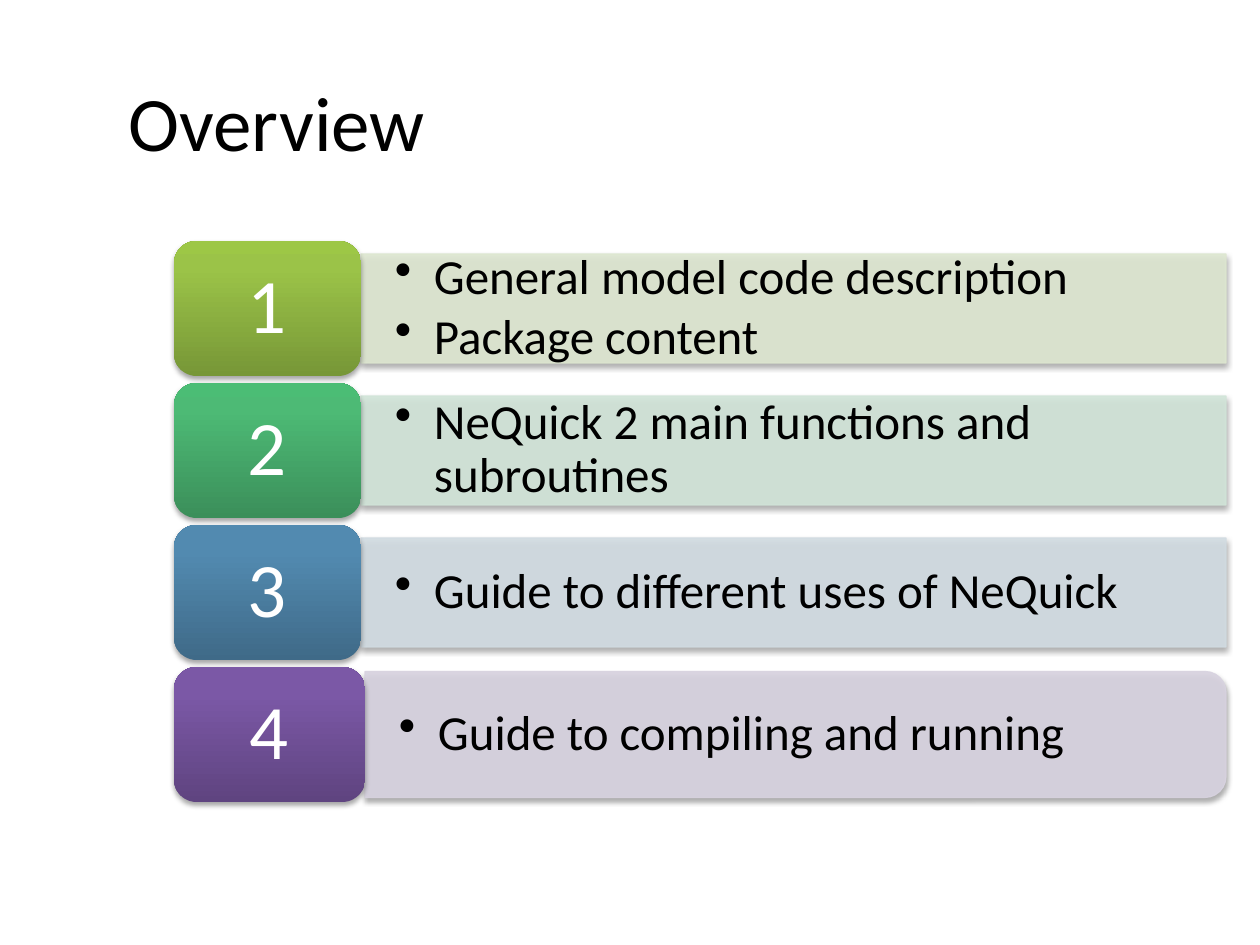
from copy import deepcopy

from lxml.etree import SubElement
from pptx import Presentation
from pptx.dml.color import RGBColor
from pptx.enum.shapes import MSO_SHAPE
from pptx.enum.text import MSO_ANCHOR, PP_ALIGN
from pptx.oxml.ns import qn
from pptx.util import Pt

PX = 7257.14  # EMU per px at 126 px to the inch


def emu(*lengths):
    return [round(length * PX) for length in lengths]


def color(hex_code):
    return RGBColor.from_string(hex_code)


# number, tile width, gradient from bottom to top, bar colour, bar shape, bar height, bullets
RECT, ROUND = MSO_SHAPE.RECTANGLE, MSO_SHAPE.ROUND_2_SAME_RECTANGLE
TOPICS = [
    ("1", 187, ("779737", "9BC348", "9DC746"), "DEE7D1", RECT, 109,
     ["General model code description", "Package content"]),
    ("2", 187, ("3B8F5A", "4DBA75", "4BBD75"), "D2E5D9", RECT, 109,
     ["NeQuick 2 main functions and subroutines"]),
    ("3", 187, ("3F6A88", "528AB0", "518BB3"), "D2DCE2", RECT, 109,
     ["Guide to different uses of NeQuick"]),
    ("4", 191, ("5F4480", "7B58A6", "7C57A8"), "D8D3E0", ROUND, 126,
     ["Guide to compiling and running"]),
]
LEFT, RIGHT, TOP, PITCH, TILE_HEIGHT = 174, 1226, 241, 142, 135

deck = Presentation()
deck.slide_width, deck.slide_height = emu(1260, 945)
page = deck.slides.add_slide(deck.slide_layouts[5])

title = page.shapes.title
title.left, title.top, title.width, title.height = emu(116, 42, 1113, 158)
title.text_frame.vertical_anchor = MSO_ANCHOR.MIDDLE
para = title.text_frame.paragraphs[0]
para.alignment = PP_ALIGN.LEFT
span = para.add_run()
span.text = "Overview"
span.font.name, span.font.size = "Calibri", Pt(44)
span.font.color.rgb = color("000000")

for row, (number, tile_width, gradient, tint, outline, bar_height, bullets) in enumerate(TOPICS):
    tile_top = TOP + row * PITCH
    middle = tile_top + TILE_HEIGHT / 2
    bar_left = LEFT + tile_width
    bar_width = RIGHT - bar_left

    # The bar stands upright and is turned, so its rounded end faces right
    center = bar_left + bar_width / 2
    bar = page.shapes.add_shape(outline, *emu(
        center - bar_height / 2, middle - bar_width / 2, bar_height, bar_width))
    bar.rotation = 90
    bar.fill.solid()
    bar.fill.fore_color.rgb = color(tint)
    bar.line.color.rgb = color(tint)
    bar.line.width = Pt(0.75)
    for shade in bar.element.spPr.iter(qn("a:srgbClr")):
        SubElement(shade, qn("a:alpha"), val="90000")

    box = page.shapes.add_textbox(*emu(bar_left, middle - bar_height / 2, bar_width, bar_height))
    frame = box.text_frame
    frame.word_wrap = True
    frame.vertical_anchor = MSO_ANCHOR.MIDDLE
    frame.margin_left, frame.margin_right, frame.margin_top, frame.margin_bottom = emu(34, 34, 18, 18)
    for index, bullet in enumerate(bullets):
        para = frame.add_paragraph() if index else frame.paragraphs[0]
        para.level = 1
        para.line_spacing = 0.9
        para.space_after = Pt(4.2)
        properties = para._p.get_or_add_pPr()
        indent = emu(39)[0]
        properties.set("marL", str(indent))
        properties.set("indent", str(-indent))
        SubElement(properties, qn("a:buChar"), char="•")
        span = para.add_run()
        span.text = bullet
        span.font.name, span.font.size = "Calibri", Pt(28)
        span.font.color.rgb = color("000000")

    tile = page.shapes.add_shape(
        MSO_SHAPE.ROUNDED_RECTANGLE, *emu(LEFT, tile_top, tile_width, TILE_HEIGHT))
    tile.fill.gradient()
    tile.fill.gradient_angle = 90
    stop_list = tile.element.spPr.find(".//" + qn("a:gsLst"))
    stop_list.append(deepcopy(stop_list[-1]))
    for stop, position, hex_code in zip(tile.fill.gradient_stops, (0, 0.8, 1), gradient):
        stop.position = position
        stop.color.rgb = color(hex_code)
    tile.line.fill.background()
    tile.text_frame.vertical_anchor = MSO_ANCHOR.MIDDLE
    para = tile.text_frame.paragraphs[0]
    para.alignment = PP_ALIGN.CENTER
    para.line_spacing = 0.9
    span = para.add_run()
    span.text = number
    span.font.name, span.font.size = "Calibri", Pt(44)
    span.font.color.rgb = color("FFFFFF")

    for shape in (bar, tile):
        shape.shadow.inherit = False
        effects = shape.element.spPr.find(qn("a:effectLst"))
        shadow = SubElement(effects, qn("a:outerShdw"), blurRad=str(Pt(3.1)), dist=str(Pt(1.8)),
                            dir="5400000", rotWithShape="0")
        shade = SubElement(shadow, qn("a:srgbClr"), val="000000")
        SubElement(shade, qn("a:alpha"), val="35000")

deck.save("out.pptx")
